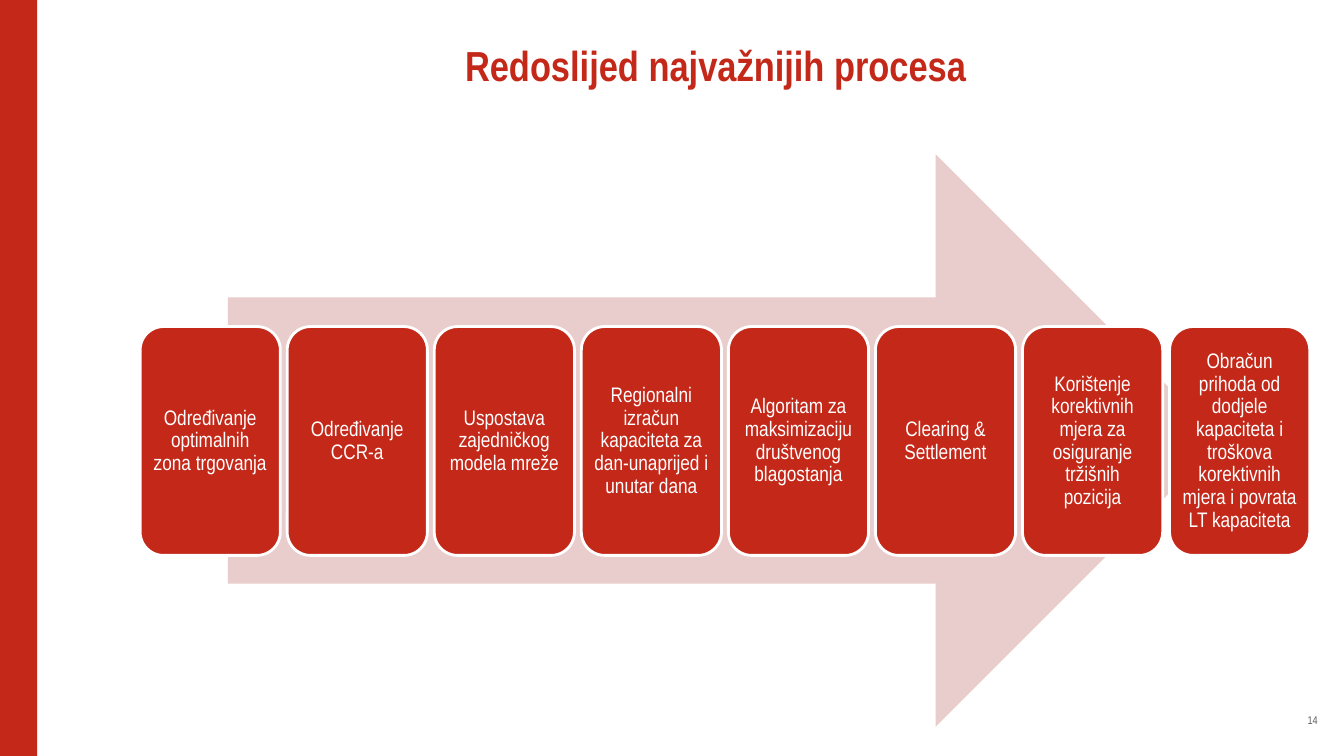
from pptx import Presentation
from pptx.dml.color import RGBColor
from pptx.enum.shapes import MSO_SHAPE
from pptx.enum.text import MSO_ANCHOR, MSO_AUTO_SIZE, PP_ALIGN
from pptx.util import Inches, Pt

COLORS = {"red": "C32819", "pink": "E9CDCC", "white": "FFFFFF", "gray": "5A5D5F"}
FONT = "Arial Narrow"

STEPS = [
    "Određivanje optimalnih zona trgovanja",
    "Određivanje CCR-a",
    "Uspostava zajedničkog modela mreže",
    "Regionalni izračun kapaciteta za dan-unaprijed i unutar dana",
    "Algoritam za maksimizaciju društvenog blagostanja",
    "Clearing & Settlement",
    "Korištenje korektivnih mjera za osiguranje tržišnih pozicija",
    "Obračun prihoda od dodjele kapaciteta i troškova korektivnih mjera i povrata LT kapaciteta",
]
FIRST_LEFT, LAST_LEFT = 1.39, 11.6
STEP_TOP, STEP_WIDTH, STEP_HEIGHT = 3.24, 1.39, 2.27


def color(name):
    return RGBColor.from_string(COLORS[name])


def write_text(shape, text, size, color_name, align=PP_ALIGN.CENTER,
               bold=False, inset=0, spacing=1.0):
    frame = shape.text_frame
    frame_format = {
        "word_wrap": True,
        "auto_size": MSO_AUTO_SIZE.NONE,
        "vertical_anchor": MSO_ANCHOR.MIDDLE,
        "margin_left": Inches(inset),
        "margin_right": Inches(inset),
        "margin_top": Inches(inset),
        "margin_bottom": Inches(inset),
    }
    for name, value in frame_format.items():
        setattr(frame, name, value)
    para = frame.paragraphs[0]
    para.alignment = align
    para.line_spacing = spacing
    span = para.add_run()
    span.text = text
    font_format = {"name": FONT, "size": Pt(size), "bold": bold}
    for name, value in font_format.items():
        setattr(span.font, name, value)
    span.font.color.rgb = color(color_name)


def add_block(page, kind, left, top, width, height, fill, line=None):
    block = page.shapes.add_shape(
        kind, Inches(left), Inches(top), Inches(width), Inches(height))
    block.shadow.inherit = False
    block.fill.solid()
    block.fill.fore_color.rgb = color(fill)
    if line:
        block.line.color.rgb = color(line)
        block.line.width = Pt(2)
    else:
        block.line.fill.background()
    return block


def add_title(page, text):
    title = page.shapes.title
    place = {"left": 1.1, "top": 0.13, "width": 12, "height": 1.02}
    for name, value in place.items():
        setattr(title, name, Inches(value))
    write_text(title, text, 30, "red", bold=True)


def add_page_number(page, text):
    box = page.shapes.add_textbox(
        Inches(12.42), Inches(7.08), Inches(0.65), Inches(0.13))
    write_text(box, text, 8, "gray", align=PP_ALIGN.RIGHT)


def add_steps(page):
    pitch = (LAST_LEFT - FIRST_LEFT) / (len(STEPS) - 1)
    for index, text in enumerate(STEPS):
        step = add_block(page, MSO_SHAPE.ROUNDED_RECTANGLE,
                         FIRST_LEFT + index * pitch, STEP_TOP,
                         STEP_WIDTH, STEP_HEIGHT, "red", "white")
        write_text(step, text, 15, "white", inset=0.06, spacing=0.9)


def main():
    deck = Presentation()
    deck.slide_width, deck.slide_height = Inches(13.33), Inches(7.5)
    page = deck.slides.add_slide(deck.slide_layouts[5])

    # Page frame
    add_page_number(page, "14")
    add_block(page, MSO_SHAPE.RECTANGLE, 0, 0, 0.37, 7.5, "red")
    add_title(page, "Redoslijed najvažnijih procesa")

    # Process arrow with its steps
    add_block(page, MSO_SHAPE.RIGHT_ARROW, 2.26, 1.53, 9.86, 5.68, "pink")
    add_steps(page)

    deck.save("out.pptx")


if __name__ == "__main__":
    main()
